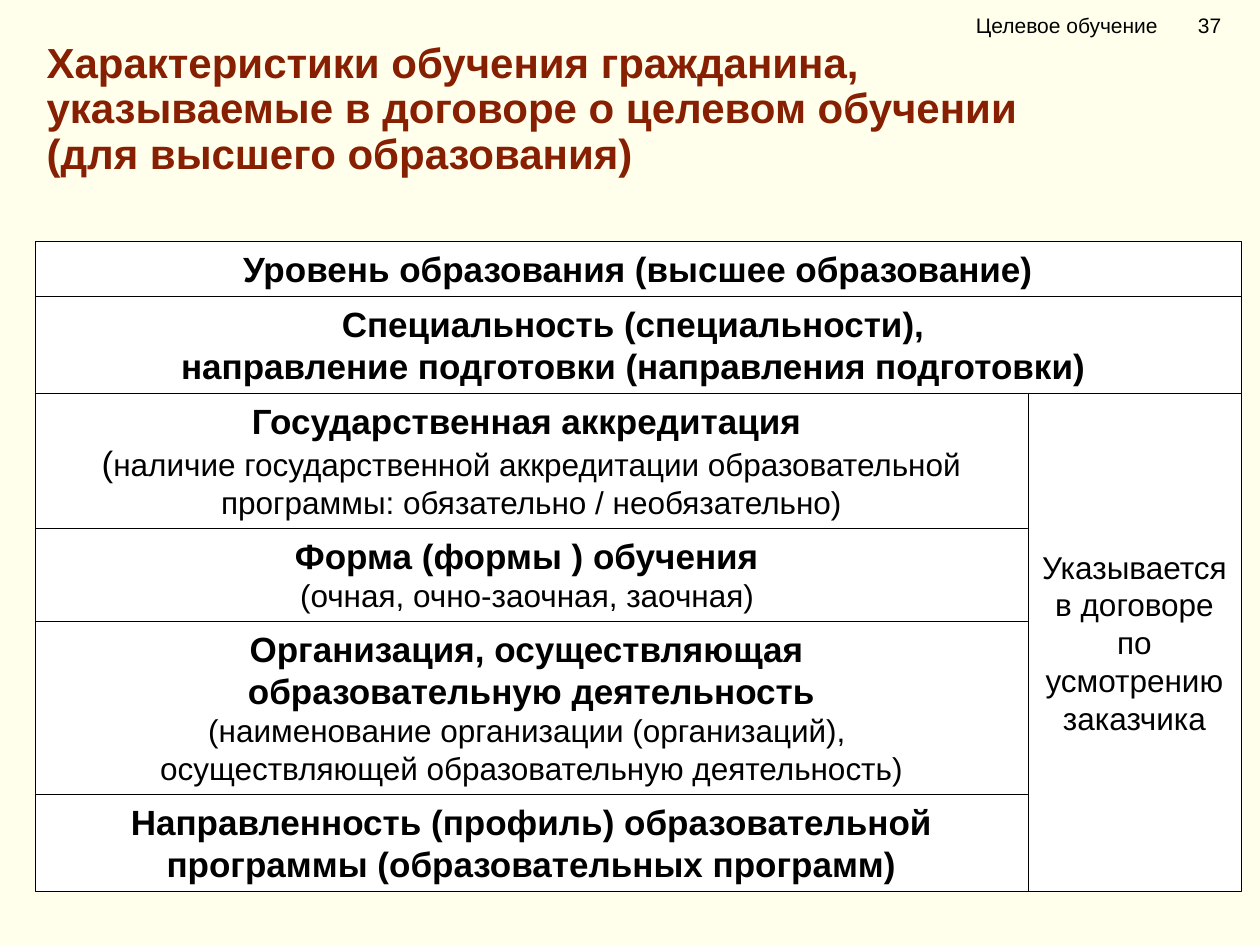
"""Builds a slide listing the study characteristics named in a targeted training contract."""
import pptx
import pptx.dml.color
import pptx.enum.shapes
import pptx.enum.text
import pptx.util
from lxml import etree

PX = 914400 // 126
CREAM = pptx.dml.color.RGBColor(0xFF, 0xFF, 0xEB)
WHITE = pptx.dml.color.RGBColor(0xFF, 0xFF, 0xFF)
BLACK = pptx.dml.color.RGBColor(0, 0, 0)
BROWN = pptx.dml.color.RGBColor(0x87, 0x1F, 0x03)
ALIGN = pptx.enum.text.PP_ALIGN
ANCHOR = pptx.enum.text.MSO_ANCHOR

TITLE = [
    [("Характеристики обучения гражданина,", 24, True)],
    [("указываемые в договоре о целевом обучении", 24, True)],
    [("(для высшего образования)", 24, True)],
]
HEADER = [[("Целевое обучение\t37", 12, False)]]
SIDE_NOTE = [[("Указывается в договоре по усмотрению заказчика", 18, False)]]
FULL_ROWS = [
    (55, [[("Уровень образования (высшее образование)", 20, True)]]),
    (97, [
        [("Специальность (специальности), ", 20, True)],
        [("направление подготовки (направления подготовки) ", 20, True)],
    ]),
]
OPTIONAL_ROWS = [
    (135, [
        [("Государственная аккредитация ", 20, True)],
        [("(", 20, False),
         ("наличие государственной аккредитации образовательной "
          "программы: обязательно / необязательно)", 18, False)],
    ]),
    (93, [
        [("Форма (формы ) обучения ", 20, True)],
        [("(очная, очно-заочная, заочная) ", 18, False)],
    ]),
    (173, [
        [("Организация, осуществляющая ", 20, True)],
        [("образовательную деятельность", 20, True)],
        [("(наименование организации (организаций), ", 18, False)],
        [("осуществляющей образовательную деятельность)", 18, False)],
    ]),
    (97, [[("Направленность (профиль) образовательной "
            "программы (образовательных программ)", 20, True)]]),
]
LEFT, TOP, FULL_WIDTH, SIDE_WIDTH = 35, 241, 1206, 213
MAIN_WIDTH = FULL_WIDTH - SIDE_WIDTH


def write(box, paragraphs, color=BLACK, align=ALIGN.CENTER, anchor=ANCHOR.TOP, spacing=1.0):
    frame = box.text_frame
    frame.word_wrap = True
    frame.auto_size = pptx.enum.text.MSO_AUTO_SIZE.NONE
    frame.vertical_anchor = anchor
    for index, spans in enumerate(paragraphs):
        para = frame.add_paragraph() if index else frame.paragraphs[0]
        para.alignment = align
        para.line_spacing = spacing
        para.space_before = pptx.util.Pt(0)
        for text, size, bold in spans:
            span = para.add_run()
            span.text = text
            span.font.name = "Arial"
            span.font.size = pptx.util.Pt(size)
            span.font.bold = bold
            span.font.color.rgb = color


def add_cell(page, left, top, width, height, paragraphs, anchor=ANCHOR.TOP):
    cell = page.shapes.add_shape(
        pptx.enum.shapes.MSO_SHAPE.RECTANGLE, left * PX, top * PX, width * PX, height * PX)
    cell.shadow.inherit = False
    cell.fill.solid()
    cell.fill.fore_color.rgb = WHITE
    cell.line.color.rgb = BLACK
    cell.line.width = pptx.util.Pt(0.25)
    write(cell, paragraphs, anchor=anchor)


def add_rows(page, top, width, rows):
    for height, paragraphs in rows:
        add_cell(page, LEFT, top, width, height, paragraphs)
        top += height
    return top


def add_header(page):
    header = page.shapes.add_textbox(937 * PX, 0, 323 * PX, 50 * PX)
    header.text_frame.margin_left = 39 * PX
    write(header, HEADER, align=ALIGN.LEFT, anchor=ANCHOR.MIDDLE)
    properties = header.text_frame.paragraphs[0]._p.get_or_add_pPr()
    namespace = "{" + properties.nsmap["a"] + "}"
    tabs = etree.SubElement(properties, namespace + "tabLst")
    etree.SubElement(tabs, namespace + "tab", pos=str(222 * PX), algn="l")


def main():
    deck = pptx.Presentation()
    deck.slide_width, deck.slide_height = pptx.util.Inches(10), pptx.util.Inches(7.5)
    page = deck.slides.add_slide(deck.slide_layouts[5])
    page.background.fill.solid()
    page.background.fill.fore_color.rgb = CREAM

    title = page.shapes.title
    title.left, title.top, title.width, title.height = 34 * PX, 36 * PX, 1170 * PX, 59 * PX
    write(title, TITLE, color=BROWN, align=ALIGN.LEFT, spacing=0.9)
    add_header(page)

    optional_top = add_rows(page, TOP, FULL_WIDTH, FULL_ROWS)
    bottom = add_rows(page, optional_top, MAIN_WIDTH, OPTIONAL_ROWS)
    add_cell(page, LEFT + MAIN_WIDTH, optional_top, SIDE_WIDTH, bottom - optional_top,
             SIDE_NOTE, anchor=ANCHOR.MIDDLE)
    deck.save("out.pptx")


if __name__ == "__main__":
    main()
